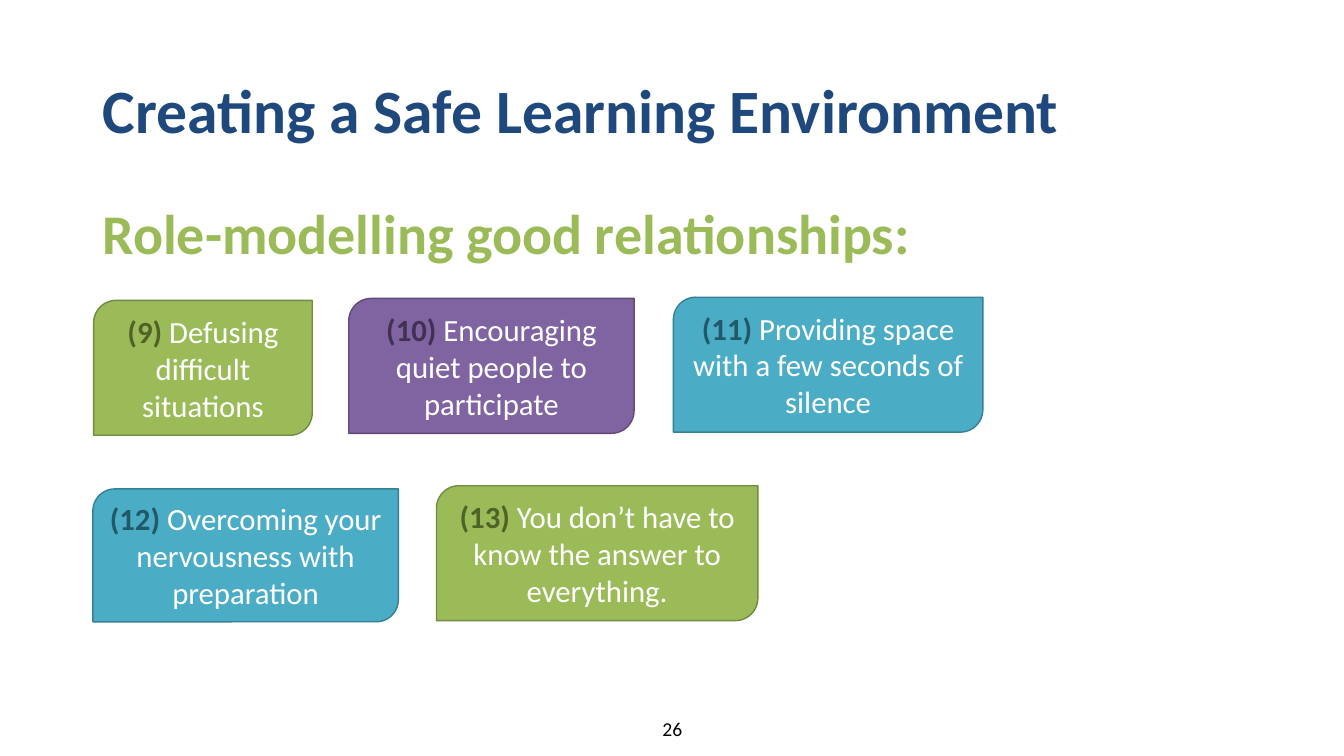
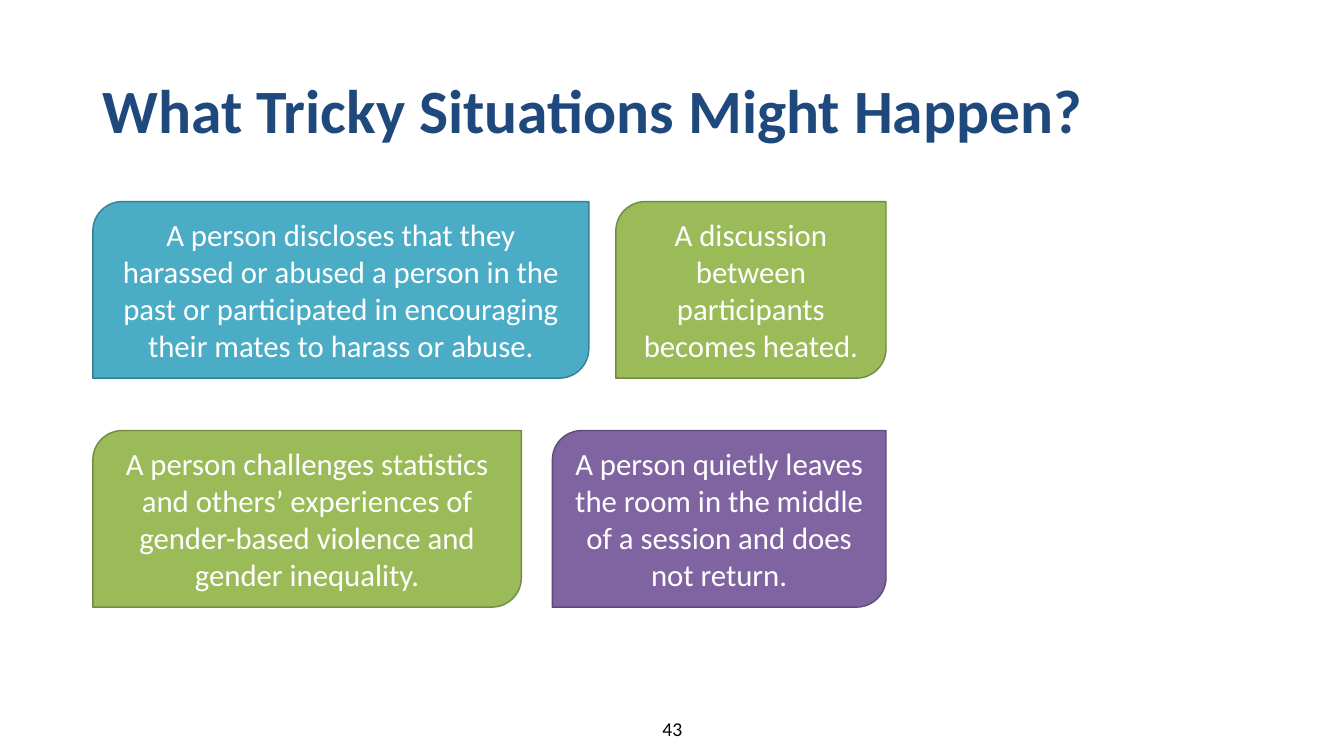
from dataclasses import dataclass

from pptx import Presentation
from pptx.dml.color import RGBColor
from pptx.enum.shapes import MSO_SHAPE
from pptx.enum.text import MSO_ANCHOR, PP_ALIGN
from pptx.slide import Slide
from pptx.util import Cm, Pt

CARD_SHAPE = MSO_SHAPE.ROUND_2_DIAG_RECTANGLE
LEFT, CENTER = PP_ALIGN.LEFT, PP_ALIGN.CENTER
TOP, MIDDLE = MSO_ANCHOR.TOP, MSO_ANCHOR.MIDDLE


@dataclass(frozen=True)
class Palette:
    fill: RGBColor
    line: RGBColor
    number: RGBColor


@dataclass(frozen=True)
class Theme:
    font: str = "Calibri"
    title_color: RGBColor = RGBColor.from_string("1F497D")
    subtitle_color: RGBColor = RGBColor.from_string("9BBB59")
    page_color: RGBColor = RGBColor.from_string("000000")
    card_text: RGBColor = RGBColor.from_string("FFFFFF")
    title_size: int = 44
    subtitle_size: int = 40
    card_size: int = 22
    page_size: int = 14
    line_width: int = 1
    heading_spacing: float = 0.9


@dataclass(frozen=True)
class Box:
    left: float
    top: float
    width: float
    height: float


@dataclass(frozen=True)
class TextStyle:
    size: int
    color: RGBColor
    bold: bool = False
    align: PP_ALIGN = LEFT
    anchor: MSO_ANCHOR = TOP
    line_spacing: float = 1.0


@dataclass(frozen=True)
class Card:
    box: Box
    palette: Palette
    text: str
    number: str = ""
    side_inset: float = 0.25


@dataclass(frozen=True)
class Page:
    title: str
    number: str
    cards: tuple[Card, ...]
    subtitle: str = ""


THEME = Theme()
GREEN, PURPLE, TEAL = (
    Palette(*(RGBColor.from_string(color) for color in colors))
    for colors in (
        ("9BBB59", "738A42", "4F6228"),
        ("8064A2", "5F4A78", "403152"),
        ("4BACC6", "377F92", "215968"),
    )
)

MARGIN = 2.34
CONTENT_WIDTH = 29.21
TITLE_BOX = Box(MARGIN, 1.02, CONTENT_WIDTH, 3.68)
SUBTITLE_BOX = Box(MARGIN, 5.08, CONTENT_WIDTH, 2.2)
PAGE_BOX = Box(MARGIN, 17.93, CONTENT_WIDTH, 0.89)

TITLE_STYLE = TextStyle(THEME.title_size, THEME.title_color, True,
                        anchor=MIDDLE, line_spacing=THEME.heading_spacing)
SUBTITLE_STYLE = TextStyle(THEME.subtitle_size, THEME.subtitle_color, True,
                           line_spacing=THEME.heading_spacing)
PAGE_STYLE = TextStyle(THEME.page_size, THEME.page_color, align=CENTER)

SHORT_CARD = 3.4
TALL_CARD = 4.45
UPPER_ROW = 5.08
LOWER_ROW = 10.85

PAGES = (
    Page(
        "Creating a Safe Learning Environment", "26",
        (
            Card(Box(2.36, 7.57, 5.51, SHORT_CARD), GREEN,
                 "Defusing difficult situations", "(9) "),
            Card(Box(8.79, 7.52, 7.19, SHORT_CARD), PURPLE,
                 "Encouraging quiet people to participate", "(10) ", 0.1),
            Card(Box(16.97, 7.49, 7.8, SHORT_CARD), TEAL,
                 "Providing space with a few seconds of silence", "(11) "),
            Card(Box(MARGIN, 12.32, 7.7, 3.35), TEAL,
                 "Overcoming your nervousness with preparation", "(12) "),
            Card(Box(11, 12.24, 8.1, SHORT_CARD), GREEN,
                 "You don’t have to know the answer to everything.", "(13) "),
        ),
        "Role-modelling good relationships:",
    ),
    Page(
        "What Tricky Situations Might Happen?", "43",
        (
            Card(Box(MARGIN, UPPER_ROW, 12.5, TALL_CARD), TEAL,
                 "A person discloses that they harassed or abused a person in "
                 "the past or participated in encouraging their mates to "
                 "harass or abuse."),
            Card(Box(15.52, UPPER_ROW, 6.81, TALL_CARD), GREEN,
                 "A discussion between participants becomes heated."),
            Card(Box(MARGIN, LOWER_ROW, 10.8, TALL_CARD), GREEN,
                 "A person challenges statistics and others’ experiences of "
                 "gender-based violence and gender inequality."),
            Card(Box(13.92, LOWER_ROW, 8.41, TALL_CARD), PURPLE,
                 "A person quietly leaves the room in the middle of a session "
                 "and does not return."),
        ),
    ),
)


def lengths(box: Box) -> tuple[Cm, Cm, Cm, Cm]:
    return Cm(box.left), Cm(box.top), Cm(box.width), Cm(box.height)


def add_text(slide: Slide, box: Box, text: str, style: TextStyle) -> None:
    text_frame = slide.shapes.add_textbox(*lengths(box)).text_frame
    text_frame.word_wrap = True
    text_frame.vertical_anchor = style.anchor
    text_frame.text = text
    paragraph = text_frame.paragraphs[0]
    paragraph.alignment = style.align
    paragraph.line_spacing = style.line_spacing
    font = paragraph.runs[0].font
    font.name = THEME.font
    font.size = Pt(style.size)
    font.bold = style.bold
    font.color.rgb = style.color


def add_card(slide: Slide, card: Card) -> None:
    shape = slide.shapes.add_shape(CARD_SHAPE, *lengths(card.box))
    shape.shadow.inherit = False
    shape.fill.solid()
    shape.fill.fore_color.rgb = card.palette.fill
    shape.line.color.rgb = card.palette.line
    shape.line.width = Pt(THEME.line_width)
    text_frame = shape.text_frame
    text_frame.word_wrap = True
    text_frame.vertical_anchor = MIDDLE
    text_frame.margin_left = text_frame.margin_right = Cm(card.side_inset)
    paragraph = text_frame.paragraphs[0]
    paragraph.alignment = CENTER
    parts = ((card.number, card.palette.number, True),
             (card.text, THEME.card_text, False))
    for text, color, bold in parts:
        if text:
            run = paragraph.add_run()
            run.text = text
            run.font.name = THEME.font
            run.font.size = Pt(THEME.card_size)
            run.font.bold = bold
            run.font.color.rgb = color


def add_page(slide: Slide, page: Page) -> None:
    add_text(slide, TITLE_BOX, page.title, TITLE_STYLE)
    if page.subtitle:
        add_text(slide, SUBTITLE_BOX, page.subtitle, SUBTITLE_STYLE)
    for card in page.cards:
        add_card(slide, card)
    add_text(slide, PAGE_BOX, page.number, PAGE_STYLE)


def main() -> None:
    presentation = Presentation()
    presentation.slide_width = Cm(33.87)
    presentation.slide_height = Cm(19.05)
    blank_layout = presentation.slide_layouts[6]
    for page in PAGES:
        add_page(presentation.slides.add_slide(blank_layout), page)
    presentation.save("out.pptx")


if __name__ == "__main__":
    main()
